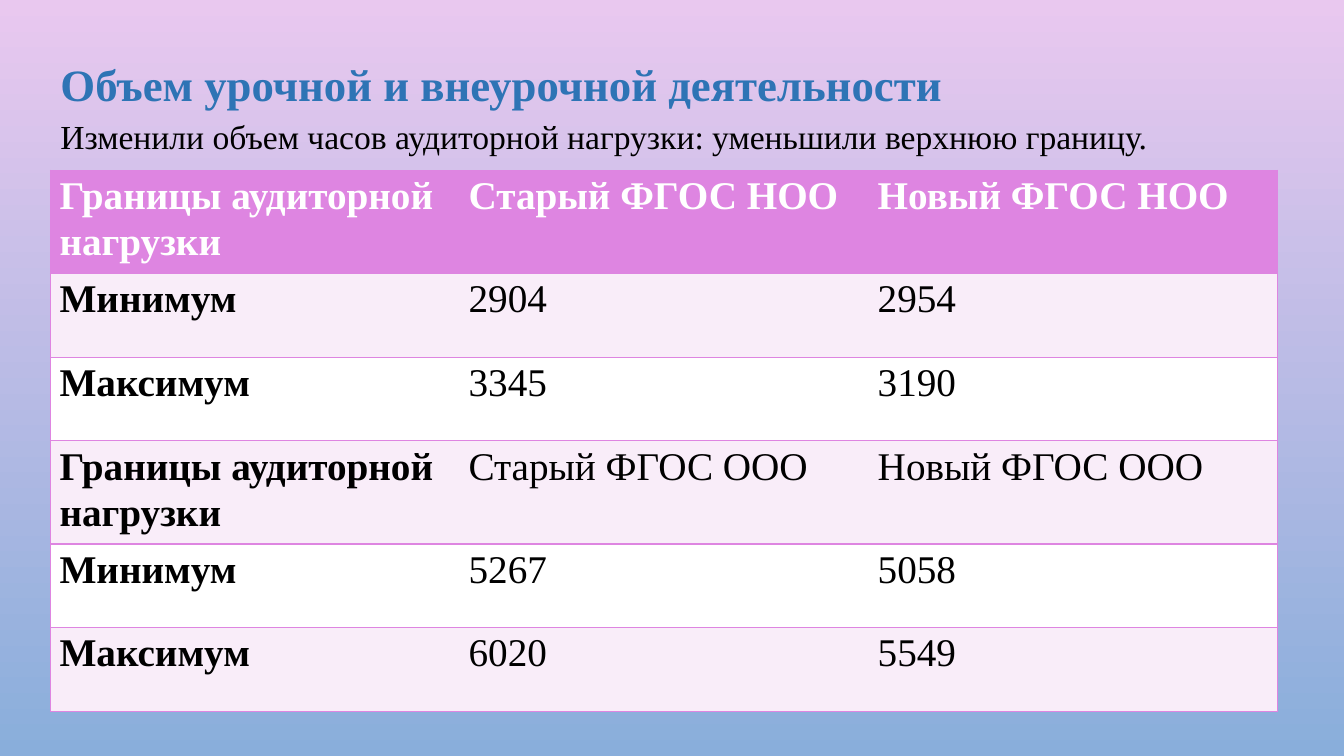
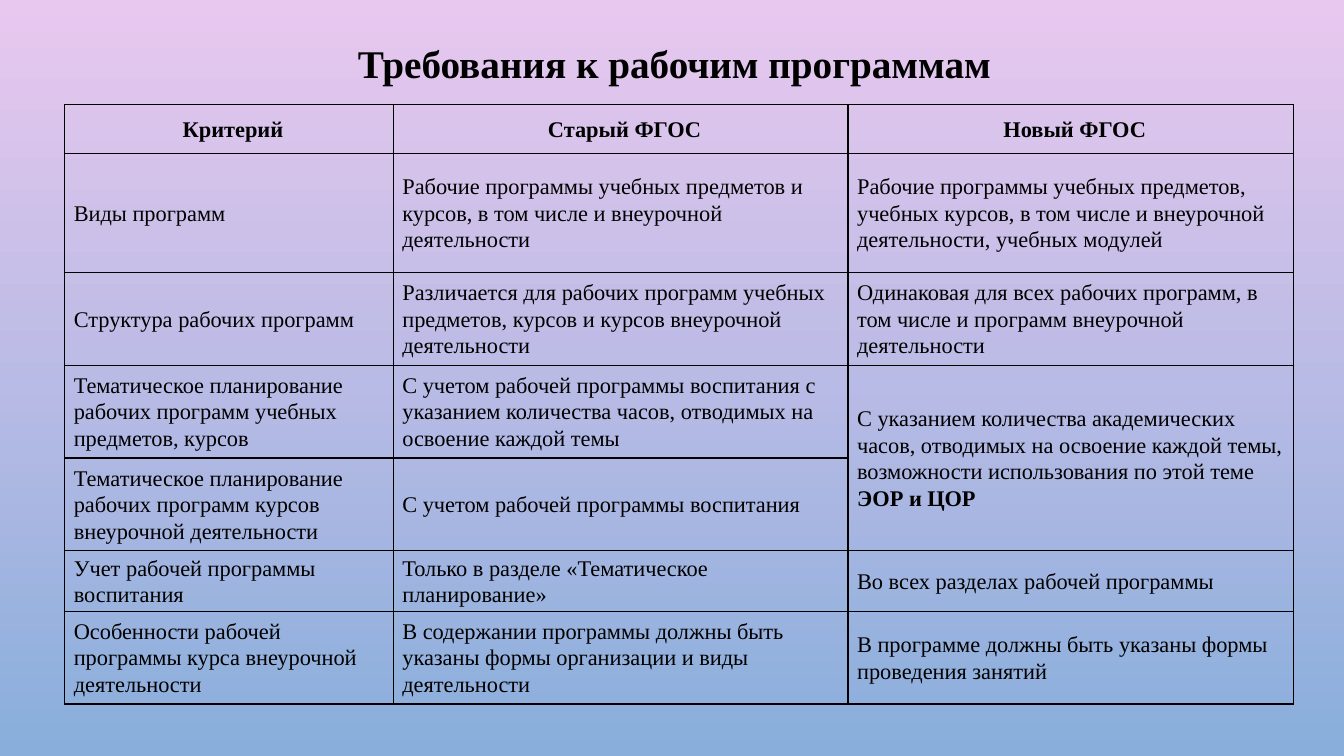
from dataclasses import dataclass

from lxml.etree import SubElement
from pptx import Presentation
from pptx.dml.color import RGBColor as RGB
from pptx.enum.text import MSO_ANCHOR as ANCHOR, MSO_AUTO_SIZE as AUTO, PP_ALIGN as ALIGN
from pptx.oxml.ns import qn
from pptx.util import Cm, Pt


@dataclass(frozen=True)
class Theme:
    font: str = "Times New Roman"
    sky_top: RGB = RGB(0xE9, 0xC8, 0xEF)
    sky_bottom: RGB = RGB(0x89, 0xAE, 0xDB)
    blue: RGB = RGB(0x2E, 0x74, 0xB5)
    pink: RGB = RGB(0xDE, 0x85, 0xE1)
    pale_pink: RGB = RGB(0xF9, 0xED, 0xF9)
    white: RGB = RGB(0xFF, 0xFF, 0xFF)
    black: RGB = RGB(0, 0, 0)
    title_large: int = 32
    title: int = 28
    lead: int = 24
    hours: int = 28
    criteria: int = 16
    line_spacing: float = 1.07


T = Theme()
NO_STYLE = "{2D5ABB26-0587-4C30-8999-92F81FD0307C}"

HOURS = [
    ("Границы аудиторной нагрузки", "Старый ФГОС НОО", "Новый ФГОС НОО"),
    ("Минимум", "2904", "2954"),
    ("Максимум", "3345", "3190"),
    ("Границы аудиторной нагрузки", "Старый ФГОС ООО", "Новый ФГОС ООО"),
    ("Минимум", "5267", "5058"),
    ("Максимум", "6020", "5549"),
]

# A tuple in a cell is plain text followed by bold text
CRITERIA = [
    ("Критерий", "Старый ФГОС", "Новый ФГОС"),
    ("Виды программ",
     "Рабочие программы учебных предметов и курсов, в том числе и внеурочной деятельности",
     "Рабочие программы учебных предметов, учебных курсов, в том числе и внеурочной "
     "деятельности, учебных модулей"),
    ("Структура рабочих программ",
     "Различается для рабочих программ учебных предметов, курсов и курсов внеурочной "
     "деятельности",
     "Одинаковая для всех рабочих программ, в том числе и программ внеурочной деятельности"),
    ("Тематическое планирование рабочих программ учебных предметов, курсов",
     "С учетом рабочей программы воспитания с указанием количества часов, отводимых на "
     "освоение каждой темы",
     ("С указанием количества академических часов, отводимых на освоение каждой темы, "
      "возможности использования по этой теме ", "ЭОР и ЦОР")),
    ("Тематическое планирование рабочих программ курсов внеурочной деятельности",
     "С учетом рабочей программы воспитания", ""),
    ("Учет рабочей программы воспитания",
     "Только в разделе «Тематическое планирование»",
     "Во всех разделах рабочей программы"),
    ("Особенности рабочей программы курса внеурочной деятельности",
     "В содержании программы должны быть указаны формы организации и виды деятельности",
     "В программе должны быть указаны формы проведения занятий"),
]


def style_paragraph(p, size, color=T.black, bold=False, align=ALIGN.LEFT, spacing=1.0):
    p.alignment = align
    p.line_spacing = spacing
    p.font.name = T.font
    p.font.size = Pt(size)
    p.font.bold = bold
    p.font.color.rgb = color


def set_background(master):
    fill = master.background.fill
    fill.gradient()
    fill.gradient_angle = 270
    for stop, color in zip(fill.gradient_stops, (T.sky_top, T.sky_bottom)):
        stop.color.rgb = color


def fill_text(sp, text, **style):
    tf = sp.text_frame
    tf.word_wrap = True
    tf.auto_size = AUTO.NONE
    tf.vertical_anchor = ANCHOR.TOP
    tf.text = text
    style_paragraph(tf.paragraphs[0], **style)


def add_titled_slide(prs, text, box, **style):
    s = prs.slides.add_slide(prs.slide_layouts[5])
    sp = s.shapes.title
    sp.left, sp.top, sp.width, sp.height = map(Cm, box)
    fill_text(sp, text, bold=True, **style)
    return s


def add_text(s, text, box, **style):
    fill_text(s.shapes.add_textbox(*map(Cm, box)), text, **style)


def add_table(s, left, top, widths, heights):
    frame = s.shapes.add_table(len(heights), len(widths), Cm(left), Cm(top),
                               Cm(sum(widths)), Cm(sum(heights)))
    table = frame.table
    table.first_row = table.horz_banding = False
    table._tbl.tblPr.find(qn("a:tableStyleId")).text = NO_STYLE
    for column, width in zip(table.columns, widths):
        column.width = Cm(width)
    for row, height in zip(table.rows, heights):
        row.height = Cm(height)
    return table


def set_borders(cell, color, sides):
    tcPr = cell._tc.get_or_add_tcPr()
    for side in "LRTB":
        ln = SubElement(tcPr, qn(f"a:ln{side}"), w=str(Pt(1)))
        if side in sides:
            fill = SubElement(ln, qn("a:solidFill"))
            SubElement(fill, qn("a:srgbClr"), val=str(color))
        else:
            SubElement(ln, qn("a:noFill"))


def fill_cell(cell, content, border, sides="LRTB", fill=None, anchor=ANCHOR.TOP, **style):
    set_borders(cell, border, sides)
    if fill is None:
        cell.fill.background()
    else:
        cell.fill.solid()
        cell.fill.fore_color.rgb = fill
    cell.margin_left = Cm(0.23)
    cell.margin_right = cell.margin_top = cell.margin_bottom = Cm(0.03)
    cell.vertical_anchor = anchor
    plain, strong = content if isinstance(content, tuple) else (content, "")
    p = cell.text_frame.paragraphs[0]
    style_paragraph(p, spacing=T.line_spacing, **style)
    if plain:
        p.add_run().text = plain
    if strong:
        r = p.add_run()
        r.text = strong
        r.font.bold = True


def build_hours_slide(prs):
    s = add_titled_slide(prs, "Объем урочной и внеурочной деятельности",
                         (1.27, 1.2, 29.1, 1.63), size=T.title_large, color=T.blue,
                         spacing=T.line_spacing)
    add_text(s, "Изменили объем часов аудиторной нагрузки: уменьшили верхнюю границу.",
             (1.27, 2.79, 31.72, 1.27), size=T.lead)
    table = add_table(s, 1.27, 4.29, [10.31] * 3, [2.6, 2.11, 2.11] * 2)
    for i, row in enumerate(HOURS):
        header = i == 0
        fill = T.pink if header else (T.white, T.pale_pink)[i % 2]
        for j, text in enumerate(row):
            # Only the outer vertical edges are ruled
            fill_cell(table.cell(i, j), text, T.pink, sides=("LTB", "TB", "RTB")[j],
                      fill=fill, size=T.hours, bold=header or j == 0,
                      color=T.white if header else T.black)


def build_criteria_slide(prs):
    s = add_titled_slide(prs, "Требования к рабочим программам",
                         (1.37, 0.86, 31.24, 1.7), size=T.title, align=ALIGN.CENTER)
    table = add_table(s, 1.63, 2.64, [8.28, 11.46, 11.23],
                      [1.22, 3, 2.34, 2.34, 2.34, 1.52, 2.34])
    for i, row in enumerate(CRITERIA):
        header = i == 0
        for j, content in enumerate(row):
            fill_cell(table.cell(i, j), content, T.black, anchor=ANCHOR.MIDDLE,
                      size=T.criteria, bold=header,
                      align=ALIGN.CENTER if header else ALIGN.LEFT)
    table.cell(3, 2).merge(table.cell(4, 2))


def main():
    prs = Presentation()
    prs.slide_width, prs.slide_height = Cm(33.87), Cm(19.05)
    set_background(prs.slide_master)
    build_hours_slide(prs)
    build_criteria_slide(prs)
    prs.save("out.pptx")


if __name__ == "__main__":
    main()
